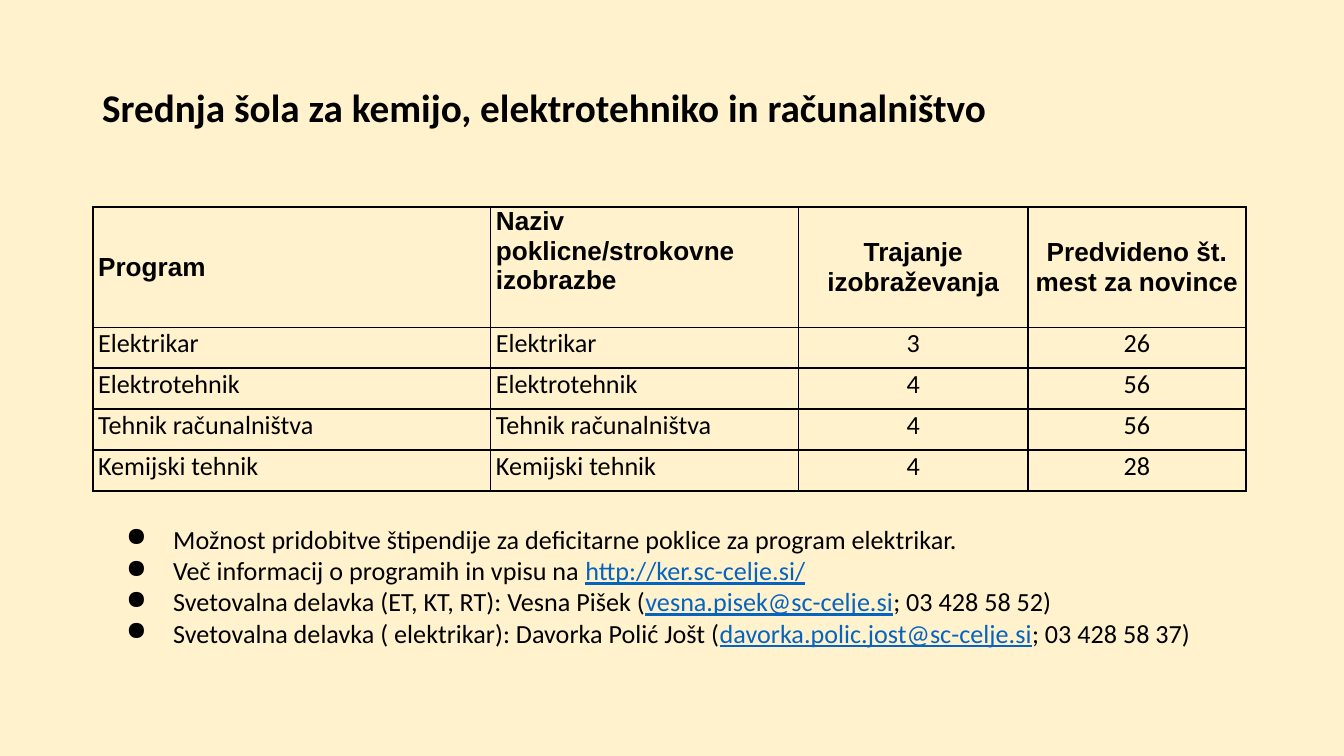
import dataclasses
import typing

import lxml.etree
import pptx
import pptx.dml.color
import pptx.enum.text
import pptx.oxml.ns
import pptx.util

Inches = pptx.util.Inches
Pt = pptx.util.Pt
Align = pptx.enum.text.PP_ALIGN
Anchor = pptx.enum.text.MSO_ANCHOR
qn = pptx.oxml.ns.qn

WIDTH, HEIGHT = Inches(10), Inches(5.625)


@dataclasses.dataclass(frozen=True)
class Theme:
    page: str = "FFF2CC"
    ink: str = "000000"
    link: str = "0563C1"
    font: str = "Calibri"
    head: str = "Arial"
    title: int = 21
    body: int = 14
    rule: int = 1


@dataclasses.dataclass(frozen=True)
class Box:
    """A place in percent of the slide's width and height."""
    left: float
    top: float
    width: float
    height: float


class Column(typing.NamedTuple):
    head: str
    share: float
    align: Align
    anchor: Anchor


class Program(typing.NamedTuple):
    name: str
    degree: str
    years: str
    places: str


class Note(typing.NamedTuple):
    lead: str
    link: str = ""
    tail: str = ""


THEME = Theme()
TITLE = Box(6.9, 4.8, 86.2, 19.4)
TABLE = Box(6.9, 27.4, 85.8, 37.6)
NOTES = Box(6.9, 67.4, 82.9, 21)
HEAD_ROW, BODY_ROW = 15.9, 5.42

COLUMNS = [
    Column("Program", 29.6, Align.LEFT, Anchor.MIDDLE),
    Column("Naziv poklicne/strokovne izobrazbe", 22.9, Align.LEFT, Anchor.TOP),
    Column("Trajanje izobraževanja", 17.1, Align.CENTER, Anchor.MIDDLE),
    Column("Predvideno št. mest za novince", 16.2, Align.CENTER, Anchor.MIDDLE),
]
PROGRAMS = [
    Program("Elektrikar", "Elektrikar", "3", "26"),
    Program("Elektrotehnik", "Elektrotehnik", "4", "56"),
    Program("Tehnik računalništva", "Tehnik računalništva", "4", "56"),
    Program("Kemijski tehnik", "Kemijski tehnik", "4", "28"),
]
REMARKS = [
    Note("Možnost pridobitve štipendije za deficitarne poklice\u00a0za program elektrikar."),
    Note("Več informacij o programih in vpisu na ", "http://ker.sc-celje.si/"),
    Note("Svetovalna delavka (ET, KT, RT): Vesna Pišek (",
         "vesna.pisek@sc-celje.si", "; 03 428 58 52)"),
    Note("Svetovalna delavka ( elektrikar): Davorka Polić Jošt (",
         "davorka.polic.jost@sc-celje.si", "; 03 428 58 37)"),
]


def across(share: float) -> int:
    return round(WIDTH * share / 100)


def down(share: float) -> int:
    return round(HEIGHT * share / 100)


def place(box: Box) -> tuple[int, int, int, int]:
    return across(box.left), down(box.top), across(box.width), down(box.height)


def paint(color: str) -> pptx.dml.color.RGBColor:
    return pptx.dml.color.RGBColor.from_string(color)


def add_run(para, text: str, size: int = THEME.body, face: str = THEME.font,
            bold: bool = False, link: bool = False) -> None:
    run = para.add_run()
    run.text = text
    font = run.font
    font.name, font.size, font.bold, font.underline = face, Pt(size), bold, link
    font.color.rgb = paint(THEME.link if link else THEME.ink)


def pad(frame, side: float, edge: float) -> None:
    frame.margin_left = frame.margin_right = Inches(side)
    frame.margin_top = frame.margin_bottom = Inches(edge)


def add_rules(cell) -> None:
    """Draw a line on all four sides of a cell."""
    props = cell._tc.get_or_add_tcPr()
    for spot, side in enumerate(("a:lnL", "a:lnR", "a:lnT", "a:lnB")):
        line = lxml.etree.Element(qn(side), w=str(Pt(THEME.rule)))
        fill = lxml.etree.SubElement(line, qn("a:solidFill"))
        lxml.etree.SubElement(fill, qn("a:srgbClr"), val=THEME.ink)
        props.insert(spot, line)


def add_bullet(para) -> None:
    props = para._p.get_or_add_pPr()
    props.set("marL", str(Inches(0.5)))
    props.set("indent", str(Inches(-0.35)))
    tint = lxml.etree.SubElement(props, qn("a:buClr"))
    lxml.etree.SubElement(tint, qn("a:srgbClr"), val=THEME.ink)
    lxml.etree.SubElement(props, qn("a:buChar"), char="●")


def set_title(slide, text: str) -> None:
    shape = slide.shapes.title
    shape.left, shape.top, shape.width, shape.height = place(TITLE)
    frame = shape.text_frame
    frame.word_wrap = True
    frame.auto_size = pptx.enum.text.MSO_AUTO_SIZE.NONE
    frame.vertical_anchor = Anchor.MIDDLE
    pad(frame, 0.07, 0.04)
    para = frame.paragraphs[0]
    para.alignment, para.line_spacing = Align.LEFT, 0.9
    add_run(para, text, THEME.title, bold=True)


def fill_cell(cell, text: str, column: Column, head: bool) -> None:
    pad(cell, 0.04, 0)
    cell.vertical_anchor = column.anchor if head else Anchor.TOP
    cell.fill.background()
    add_rules(cell)
    para = cell.text_frame.paragraphs[0]
    para.alignment = column.align
    add_run(para, text, face=THEME.head if head else THEME.font, bold=head)


def add_grid(slide) -> None:
    rows = [[column.head for column in COLUMNS], *PROGRAMS]
    table = slide.shapes.add_table(len(rows), len(COLUMNS), *place(TABLE)).table
    table.horz_banding = table.first_row = False
    for x, column in enumerate(COLUMNS):
        table.columns[x].width = across(column.share)
    for y, texts in enumerate(rows):
        table.rows[y].height = down(BODY_ROW if y else HEAD_ROW)
        for x, text in enumerate(texts):
            fill_cell(table.cell(y, x), text, COLUMNS[x], y == 0)


def add_notes(slide) -> None:
    frame = slide.shapes.add_textbox(*place(NOTES)).text_frame
    frame.word_wrap = True
    pad(frame, 0.1, 0.1)
    for i, note in enumerate(REMARKS):
        para = frame.add_paragraph() if i else frame.paragraphs[0]
        add_bullet(para)
        for text in filter(None, note):
            add_run(para, text, link=text == note.link)


def main() -> None:
    deck = pptx.Presentation()
    deck.slide_width, deck.slide_height = WIDTH, HEIGHT
    slide = deck.slides.add_slide(deck.slide_layouts[5])
    slide.background.fill.solid()
    slide.background.fill.fore_color.rgb = paint(THEME.page)
    set_title(slide, "Srednja šola za kemijo, elektrotehniko in računalništvo")
    add_grid(slide)
    add_notes(slide)
    deck.save("out.pptx")


if __name__ == "__main__":
    main()
